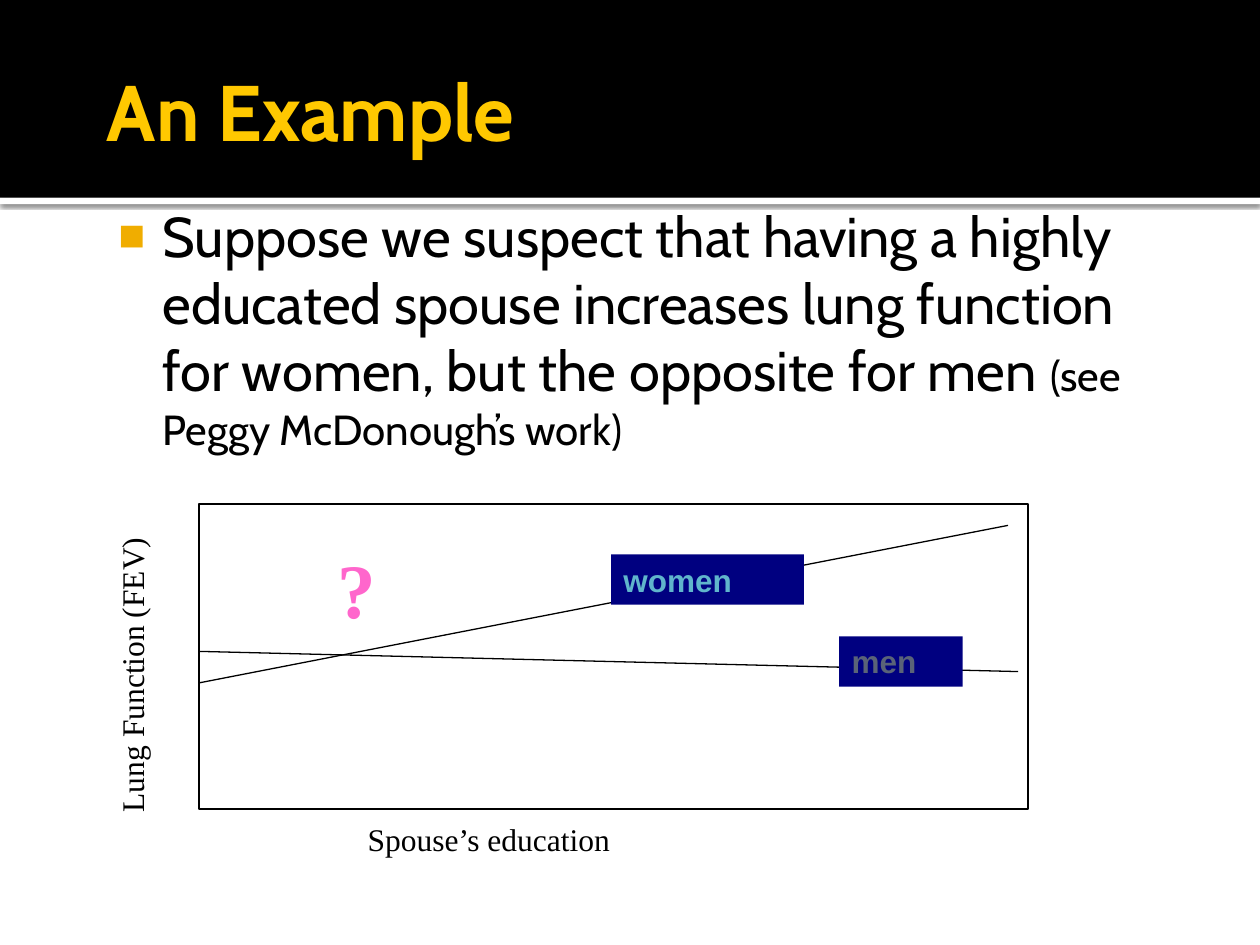
from lxml import etree
from pptx import Presentation
from pptx.dml.color import RGBColor
from pptx.enum.shapes import MSO_CONNECTOR as Connector, MSO_SHAPE as Preset
from pptx.enum.text import MSO_ANCHOR as Anchor, PP_ALIGN as Align
from pptx.oxml.ns import qn
from pptx.util import Inches, Pt

SERIF = {"name": "Times New Roman", "size": Pt(18)}
LABEL = {"name": "Arial", "size": Pt(18), "bold": True}
TITLE = {"name": "Cabin", "size": Pt(45), "bold": True}
BODY = {"name": "Cabin", "size": Pt(32)}
NOTE = {"name": "Cabin", "size": Pt(24)}


def color(value):
    return RGBColor.from_string(value)


def add_node(parent, tag, **attributes):
    return etree.SubElement(parent, qn(tag), attributes)


def add_span(para, text, font, ink="000000"):
    span = para.add_run()
    span.text = text
    for name, value in font.items():
        setattr(span.font, name, value)
    span.font.color.rgb = color(ink)


def add_rect(page, box, fill=None, line=None):
    rect = page.shapes.add_shape(Preset.RECTANGLE, *map(Inches, box))
    rect.shadow.inherit = False
    if fill:
        rect.fill.solid()
        rect.fill.fore_color.rgb = color(fill)
    else:
        rect.fill.background()
    if line:
        rect.line.color.rgb = color(line)
        rect.line.width = Pt(0.75)
    else:
        rect.line.fill.background()
    return rect


def format_frame(shape, anchor=Anchor.TOP, wrap=True, insets=(0.1, 0.05, 0.1, 0.05)):
    frame = shape.text_frame
    left, top, right, bottom = map(Inches, insets)
    formats = {
        "word_wrap": wrap, "vertical_anchor": anchor, "margin_left": left,
        "margin_top": top, "margin_right": right, "margin_bottom": bottom,
    }
    for name, value in formats.items():
        setattr(frame, name, value)
    para = frame.paragraphs[0]
    para.alignment = Align.LEFT
    return para


def add_text(page, box, **formats):
    shape = page.shapes.add_textbox(*map(Inches, box))
    return shape, format_frame(shape, **formats)


def add_line(page, start, end):
    line = page.shapes.add_connector(Connector.STRAIGHT, *map(Inches, start + end))
    line.line.color.rgb = color("000000")
    line.line.width = Pt(0.75)
    add_node(line._element.spPr, "a:effectLst")


def add_label(page, box, text, ink):
    label = add_rect(page, box, fill="000080")
    add_span(format_frame(label), text, LABEL, ink)


def add_header(page, width, height):
    stripe = add_rect(page, (0, height, width, 0.05), fill="FFFFFF")
    effects = stripe._element.spPr.find(qn("a:effectLst"))
    shadow = add_node(effects, "a:outerShdw", blurRad=str(Pt(2.5)), dist=str(Pt(0.8)),
                      dir="5400000", algn="tl", rotWithShape="0")
    shade = add_node(shadow, "a:srgbClr", val="000000")
    add_node(shade, "a:alpha", val="60000")
    add_rect(page, (0, 0, width, height), fill="000000")
    title, para = add_text(page, (0.75, 0.25, 8.5, 1.25), anchor=Anchor.MIDDLE,
                           insets=(0.1, 0.05, 0.05, 0.05))
    add_span(para, "An Example", TITLE, "FFC800")


def add_body(page, box):
    body, para = add_text(page, box, insets=(0.06, 0.1, 0.1, 0.05))
    layout = para._p.get_or_add_pPr()
    layout.set("marL", str(Inches(0.48)))
    layout.set("indent", str(Inches(-0.35)))
    bullet_color = add_node(layout, "a:buClr")
    add_node(bullet_color, "a:srgbClr", val="F0AD00")
    add_node(layout, "a:buSzPct", val="80000")
    add_node(layout, "a:buFont", typeface="Arial")
    add_node(layout, "a:buChar", char="■")
    add_span(para, "Suppose we suspect that having a highly educated spouse increases "
                   "lung function for women, but the opposite for men ", BODY)
    add_span(para, "(see Peggy McDonough’s work)", NOTE)


def add_diagram(page, box):
    left, top, width, height = box
    add_rect(page, box, line="000000")
    add_line(page, (left, top + 1.42), (left + 6.42, top + 0.17))
    add_line(page, (left, top + 1.17), (left + 6.5, top + 1.33))
    caption, para = add_text(page, (left + 1.24, top + height + 0.04, 2.14, 0.4), wrap=False)
    add_span(para, "Spouse’s education", SERIF)
    caption, para = add_text(page, (left - 1.88, top + 1, 2.69, 0.4))
    caption.rotation = 270
    add_span(para, "Lung Function (FEV)", SERIF)
    mark, para = add_text(page, (left + 1, top + 0.25, 0.51, 0.84), wrap=False)
    add_span(para, "?", {**SERIF, "size": Pt(44), "bold": True}, "FF66CC")
    add_label(page, (left + 3.27, top + 0.4, 1.53, 0.4), "women", "60B5CC")
    add_label(page, (left + 5.08, top + 1.05, 0.98, 0.4), "men", "5A6378")


def main():
    deck = Presentation()
    deck.slide_width, deck.slide_height = Inches(10), Inches(7.5)
    page = deck.slides.add_slide(deck.slide_layouts[6])
    add_header(page, 10, 1.57)
    add_body(page, (0.75, 1.5, 8.5, 2.5))
    add_diagram(page, (1.58, 4, 6.58, 2.42))
    deck.save("out.pptx")


if __name__ == "__main__":
    main()
